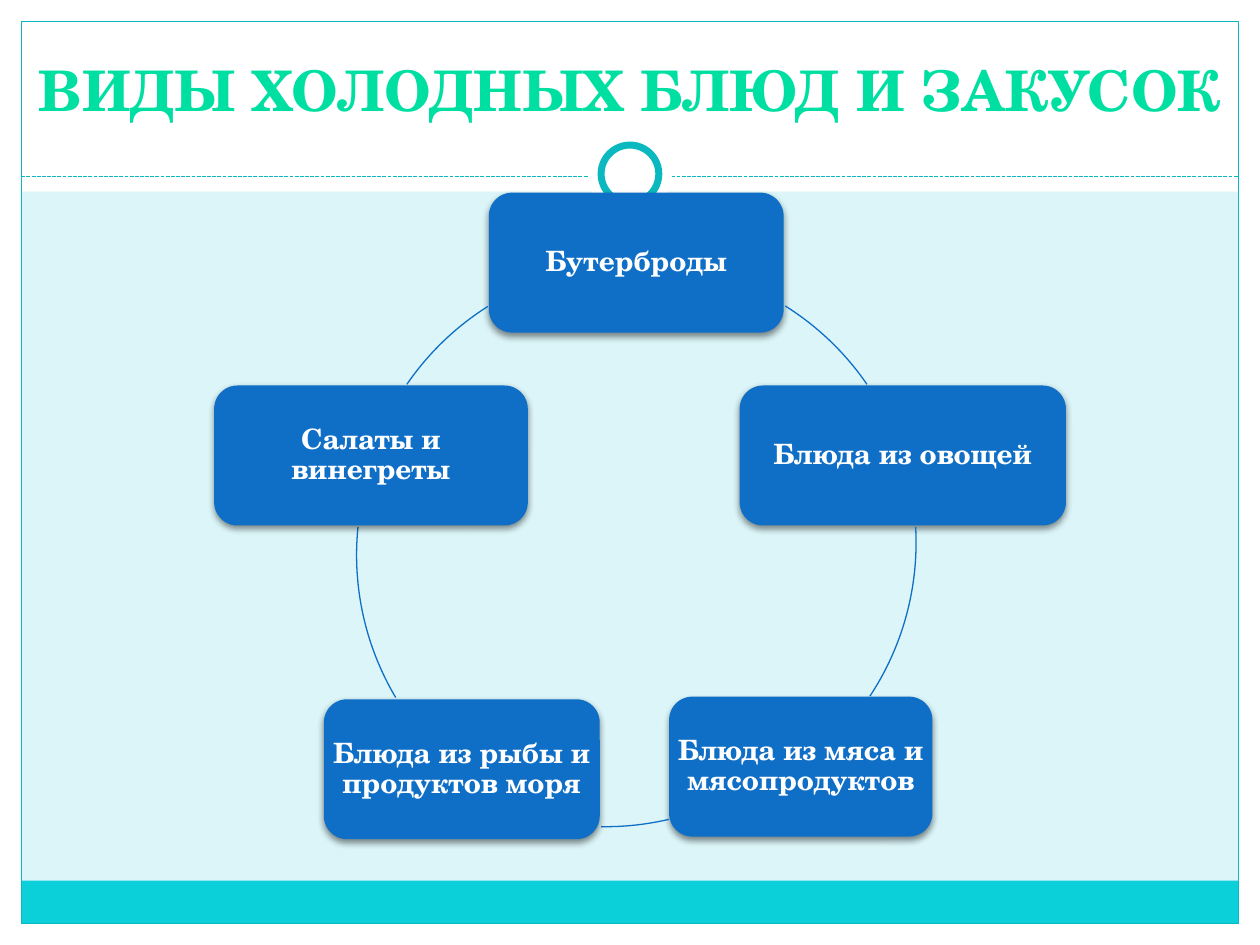
from lxml.etree import SubElement
from pptx import Presentation
from pptx.dml.color import RGBColor
from pptx.enum.dml import MSO_LINE
from pptx.enum.shapes import MSO_CONNECTOR, MSO_SHAPE
from pptx.enum.text import MSO_ANCHOR, PP_ALIGN
from pptx.oxml import parse_xml
from pptx.oxml.ns import nsdecls, qn
from pptx.util import Pt

FONT = "TeX Gyre Schola"
COLORS = {
    "background": "DBF5F9", "white": "FFFFFF", "band": "0BD0D9", "frame": "0AB8BF",
    "box": "0F6FC6", "shadow": "000000", "outline": "00A578",
}
TITLE = "ВИДЫ ХОЛОДНЫХ БЛЮД И ЗАКУСОК"
TITLE_STOPS = [(0, "006F51"), (43, "00DFA2"), (48, "00D097"), (100, "006F51")]

WIDTH, HEIGHT, MARGIN = 720, 540, 12.2
PANELS = [
    (0, HEIGHT - MARGIN, WIDTH, MARGIN, "white"),
    (0, 0, WIDTH, 109.5, "white"),
    (0, 0, MARGIN, HEIGHT, "white"),
    (WIDTH - MARGIN, 0, MARGIN, HEIGHT, "white"),
    (MARGIN, 503.3, WIDTH - 2 * MARGIN, 24.5, "band"),
]
RING_CENTER = (360, 99.4)
DIVIDER_Y = 100.8

BOX_HEIGHT = 80
ARC_SIZE = 319
# each dish: label, box centre x, centre y, width; then the arc: left, top, start and end degrees
DISHES = [
    ("Бутерброды", (363.6, 150.1, 168.5), (204.5, 150.5, 302.1, 325.5)),
    ("Блюда из овощей", (515.9, 260.3, 186.5), (204.5, 150.5, 356.8, 33.4)),
    ("Блюда из мяса и мясопродуктов", (457.6, 438.1, 150.5), (186.5, 153.4, 76.8, 90.9)),
    ("Блюда из рыбы и продуктов моря", (263.9, 439.6, 157.7), (203.8, 157.7, 149.3, 185.8)),
    ("Салаты и винегреты", (212, 260.3, 179.3), (204.5, 150.5, 214.5, 237.7)),
]


def color(name):
    return RGBColor.from_string(COLORS[name])


def add_preset(kind, left, top, width, height, fill=None, line=None, weight=0.75):
    shape = slide.shapes.add_shape(kind, Pt(left), Pt(top), Pt(width), Pt(height))
    shape.shadow.inherit = False
    if fill:
        shape.fill.solid()
        shape.fill.fore_color.rgb = color(fill)
    else:
        shape.fill.background()
    if line:
        shape.line.color.rgb = color(line)
        shape.line.width = Pt(weight)
    else:
        shape.line.fill.background()
    return shape


def add_circle(size, **style):
    x, y = RING_CENTER
    add_preset(MSO_SHAPE.OVAL, x - size / 2, y - size / 2, size, size, **style)


def write(shape, text, size, inset):
    frame = shape.text_frame
    frame.word_wrap = True
    frame.vertical_anchor = MSO_ANCHOR.MIDDLE
    frame.margin_left = frame.margin_right = Pt(inset)
    frame.margin_top = frame.margin_bottom = Pt(inset)
    paragraph = frame.paragraphs[0]
    paragraph.alignment = PP_ALIGN.CENTER
    run = paragraph.add_run()
    run.text = text
    run.font.name = FONT
    run.font.size = Pt(size)
    run.font.bold = True
    return paragraph, run


def add_shadow(shape):
    effects = shape._element.spPr.find(qn("a:effectLst"))
    shadow = SubElement(effects, qn("a:outerShdw"), blurRad=str(Pt(4)), dist=str(Pt(2)),
                        dir="5400000", rotWithShape="0")
    tone = SubElement(shadow, qn("a:srgbClr"), val=COLORS["shadow"])
    SubElement(tone, qn("a:alpha"), val="45000")


def add_title():
    box = slide.shapes.add_textbox(Pt(-34), Pt(28), Pt(788), Pt(46))
    run = write(box, TITLE, 32, 3.6)[1]
    stops = "".join(f'<a:gs pos="{position * 1000}"><a:srgbClr val="{tone}"/></a:gs>'
                    for position, tone in TITLE_STOPS)
    properties = run.font._element
    properties.insert(0, parse_xml(
        f'<a:ln {nsdecls("a")} w="{Pt(0.71)}"><a:solidFill>'
        f'<a:srgbClr val="{COLORS["outline"]}"/></a:solidFill></a:ln>'))
    properties.insert(1, parse_xml(
        f'<a:gradFill {nsdecls("a")}><a:gsLst>{stops}</a:gsLst>'
        '<a:lin ang="5400000" scaled="0"/></a:gradFill>'))


def add_dish(label, box, arc):
    x, y, width = box
    shape = add_preset(MSO_SHAPE.ROUNDED_RECTANGLE, x - width / 2, y - BOX_HEIGHT / 2,
                       width, BOX_HEIGHT, fill="box")
    add_shadow(shape)
    paragraph, run = write(shape, label, 16, 1)
    paragraph.line_spacing = 0.9
    run.font.color.rgb = color("white")
    left, top, *degrees = arc
    curve = add_preset(MSO_SHAPE.ARC, left, top, ARC_SIZE, ARC_SIZE, line="box")
    for index, angle in enumerate(degrees):
        curve.adjustments[index] = angle * 0.6


presentation = Presentation()
presentation.slide_width, presentation.slide_height = Pt(WIDTH), Pt(HEIGHT)
slide = presentation.slides.add_slide(presentation.slide_layouts[6])
slide.background.fill.solid()
slide.background.fill.fore_color.rgb = color("background")

for left, top, width, height, fill in PANELS:
    add_preset(MSO_SHAPE.RECTANGLE, left, top, width, height, fill=fill)
add_preset(MSO_SHAPE.RECTANGLE, MARGIN, MARGIN, WIDTH - 2 * MARGIN, HEIGHT - 2 * MARGIN,
           line="frame")
divider = slide.shapes.add_connector(MSO_CONNECTOR.STRAIGHT, Pt(MARGIN), Pt(DIVIDER_Y),
                                     Pt(WIDTH - MARGIN), Pt(DIVIDER_Y))
divider.line.color.rgb = color("frame")
divider.line.width = Pt(0.75)
divider.line.dash_style = MSO_LINE.SQUARE_DOT
SubElement(divider._element.spPr, qn("a:effectLst"))
add_circle(48, fill="white")
add_circle(33, fill="white", line="frame", weight=4)
add_title()
for dish in DISHES:
    add_dish(*dish)

presentation.save("out.pptx")
